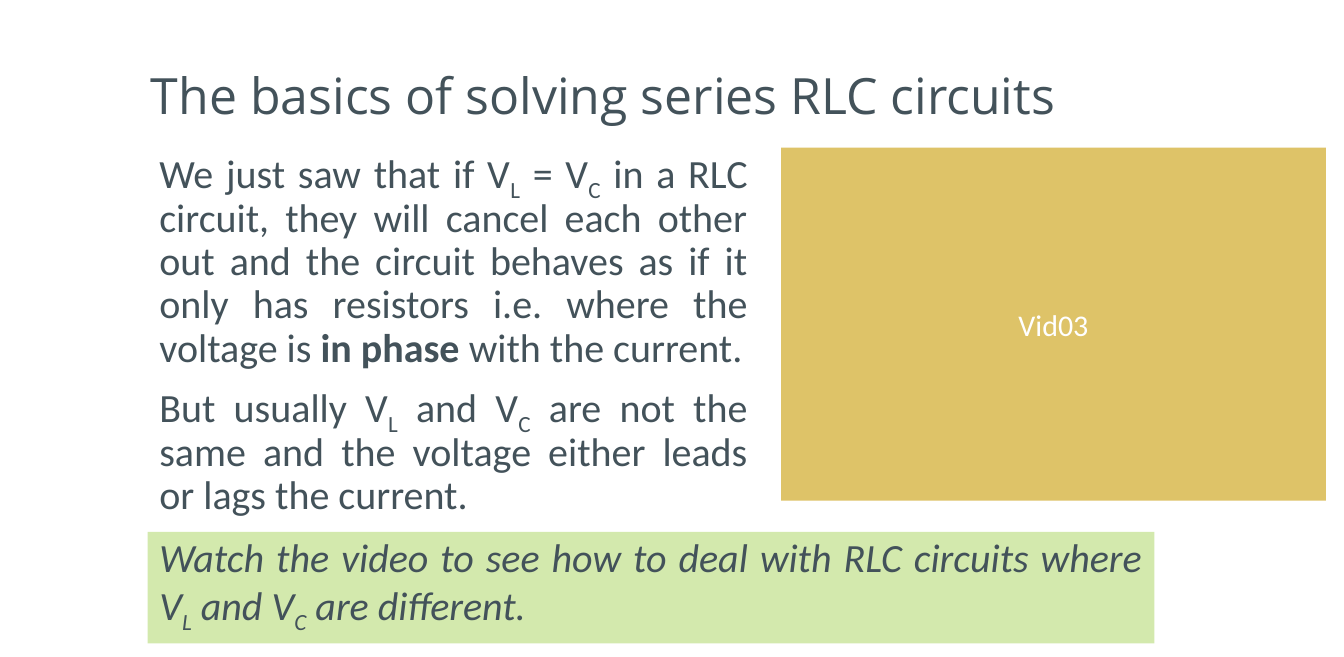
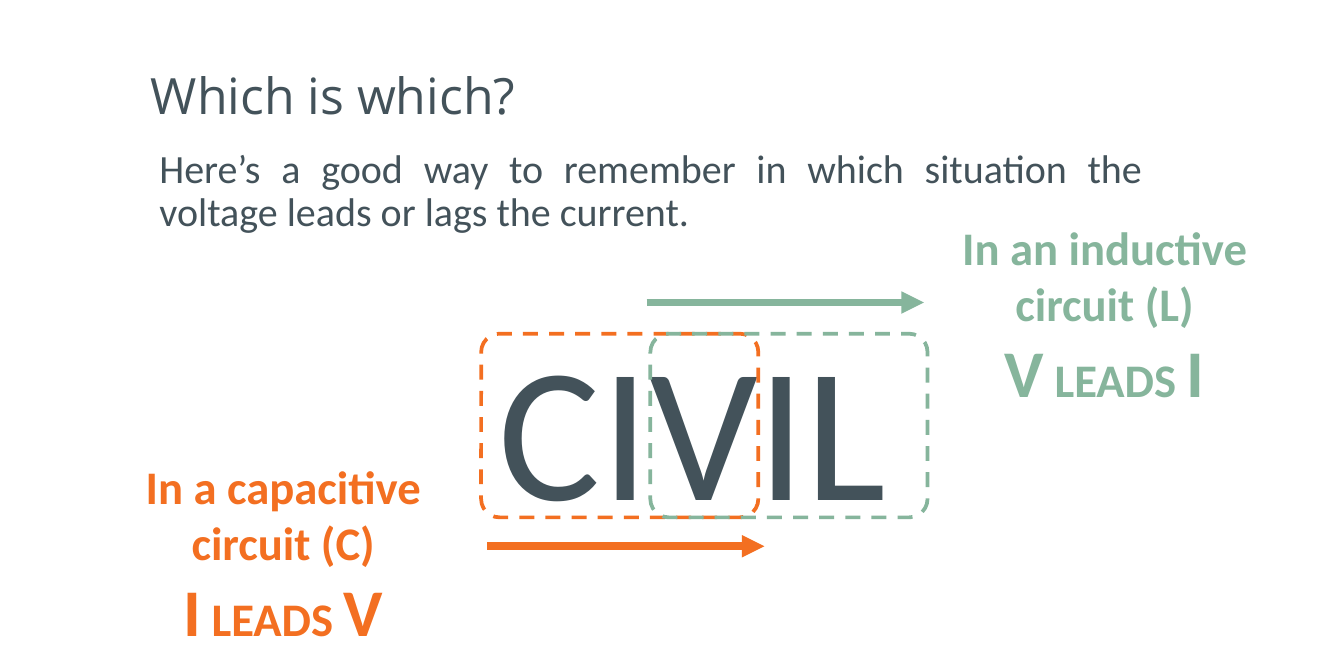
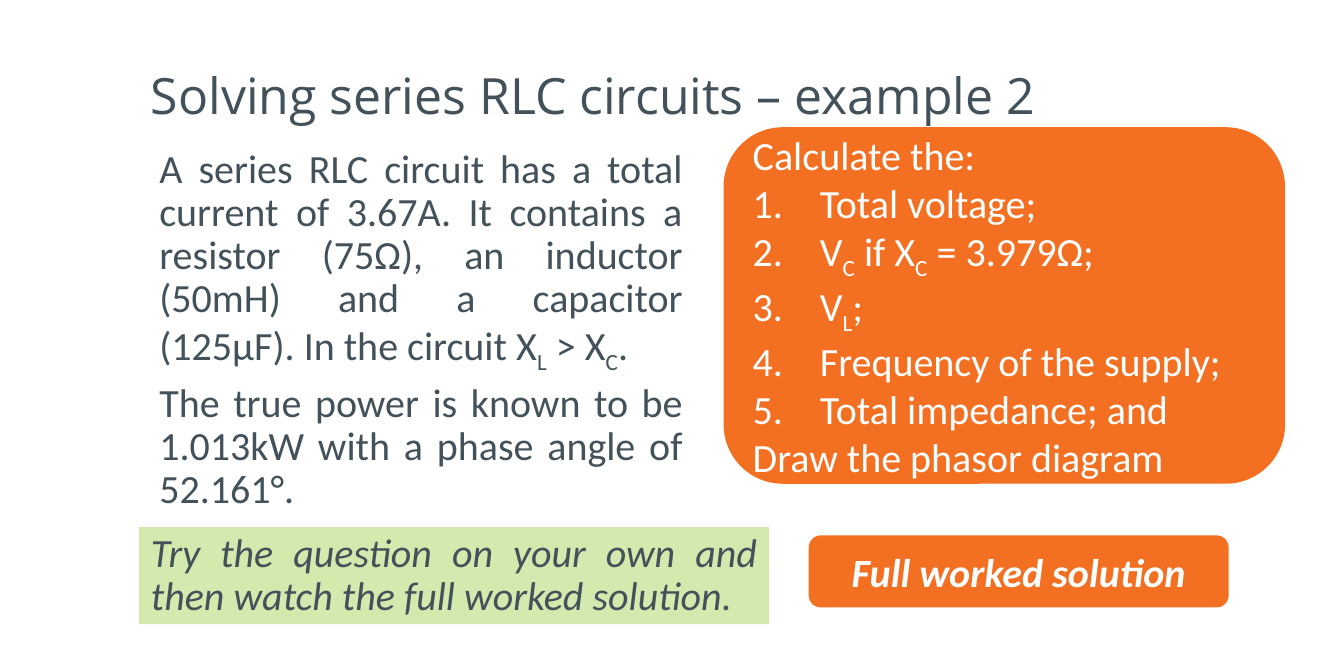
from lxml import etree
from pptx import Presentation
from pptx.dml.color import RGBColor
from pptx.enum import dml, shapes, text
from pptx.oxml.ns import qn
from pptx.util import Cm, Inches, Pt

SLATE, ORANGE, SAGE = "43525A", "F36F21", "86B59C"
LIME, GOLD, WHITE = "D3E9AD", "DEC368", "FFFFFF"
RECT, ROUND = shapes.MSO_SHAPE.RECTANGLE, shapes.MSO_SHAPE.ROUNDED_RECTANGLE
TOP, MIDDLE = text.MSO_ANCHOR.TOP, text.MSO_ANCHOR.MIDDLE
LEFT, CENTER, JUSTIFY = text.PP_ALIGN.LEFT, text.PP_ALIGN.CENTER, text.PP_ALIGN.JUSTIFY

TITLE = dict(font=dict(name="Open Sans", size=Pt(30)), anchor=MIDDLE,
             layout=dict(line_spacing=0.9))
BODY = dict(layout=dict(alignment=JUSTIFY, line_spacing=0.9, space_before=Pt(7.3)))
NOTE = dict(BODY, font=dict(italic=True), fill=LIME)
L, C = ("L", dict(subscript=True)), ("C", dict(subscript=True))


def add_box(slide, at, kind=None, fill=None, line=None):
    """Add a preset shape, or a text box when no kind is given."""
    place = [Inches(length) for length in at]
    if kind is None:
        return slide.shapes.add_textbox(*place)
    shape = slide.shapes.add_shape(kind, *place)
    shape.shadow.inherit = False
    if fill:
        shape.fill.solid()
        shape.fill.fore_color.rgb = RGBColor.from_string(fill)
    else:
        shape.fill.background()
    if line:
        shape.line.color.rgb = RGBColor.from_string(line)
        shape.line.width = Pt(2.25)
        shape.line.dash_style = dml.MSO_LINE.DASH
    else:
        shape.line.fill.background()
    return shape


def add_text(slide, at, paragraphs, kind=None, fill=None, color=SLATE, anchor=TOP,
             font={}, layout={}, wrap=True, numbered=()):
    """Add a box of paragraphs; a run is a string or a (string, format) pair."""
    frame = add_box(slide, at, kind, fill).text_frame
    frame.word_wrap, frame.vertical_anchor = wrap, anchor
    for index, runs in enumerate(paragraphs):
        paragraph = frame.paragraphs[0] if index == 0 else frame.add_paragraph()
        for name, value in dict(dict(alignment=LEFT), **layout).items():
            setattr(paragraph, name, value)
        if index in numbered:
            properties = paragraph._p.get_or_add_pPr()
            properties.set("marL", str(Inches(0.56)))
            properties.set("indent", str(-Inches(0.56)))
            etree.SubElement(properties, qn("a:buAutoNum"), type="arabicPeriod")
        for item in runs:
            words, extra = (item, {}) if isinstance(item, str) else item
            run = paragraph.add_run()
            run.text = words
            run.font.color.rgb = RGBColor.from_string(color)
            values = dict(dict(name="Calibri", size=Pt(24)), **font)
            values.update(extra)
            if values.pop("subscript", False):
                run._r.get_or_add_rPr().set("baseline", "-25000")
            for name, value in values.items():
                setattr(run.font, name, value)


presentation = Presentation()
presentation.slide_width, presentation.slide_height = Cm(28.45), Cm(13.9)
slides = []
for title in ("The basics of solving series RLC circuits", "Which is which?",
              "Solving series RLC circuits – example 2"):
    slide = presentation.slides.add_slide(presentation.slide_layouts[6])
    add_text(slide, (1.16, 0.29, 8.39, 1.06), [[title]], **TITLE)
    slides.append(slide)
basics, which, example = slides

# Basics
add_text(basics, (1.23, 1.19, 5.1, 3.4), [
    ["We just saw that if V", L, " = V", C,
     " in a RLC circuit, they will cancel each other out and the circuit behaves "
     "as if it only has resistors i.e. where the voltage is ",
     ("in phase ", dict(bold=True)), "with the current."],
    ["But usually V", L, " and V", C,
     " are not the same and the voltage either leads or lags the current."],
], **BODY)
add_text(basics, (6.51, 1.23, 4.54, 2.94), [["Vid03"]], RECT, GOLD, WHITE, MIDDLE,
         font=dict(size=Pt(18)), layout=dict(alignment=CENTER))
add_text(basics, (1.23, 4.43, 8.39, 0.93), [
    ["Watch the video to see how to deal with RLC circuits where V", L, " and V", C,
     " are different."]], RECT, **NOTE)

# Which leads
add_text(which, (1.23, 1.19, 8.39, 1.53), [
    ["Here’s a good way to remember in which situation the voltage leads or lags "
     "the current."]], **BODY)
add_text(which, (4.06, 2.52, 3.47, 2.04), [["CIVIL"]], font=dict(size=Pt(115)), wrap=False)
large = dict(size=Pt(40))
for color, frame_left, label_at, label, first, second, arrow_left, arrow_top in (
    (ORANGE, 4.01, (0.84, 3.76, 3.04, 1.72), "In a capacitive circuit (C)", "I", "V", 4.06, 4.55),
    (SAGE, 5.42, (7.68, 1.77, 3.05, 1.72), "In an inductive circuit (L)", "V", "I", 5.39, 2.52),
):
    letters = add_box(which, (frame_left, 2.78, 2.31, 1.53), ROUND, line=color)
    letters.adjustments[0] = 0.1
    add_text(which, label_at, [[label], [(first, large), " LEADS ", (second, large)]],
             color=color, font=dict(size=Pt(28), bold=True), layout=dict(alignment=CENTER))
    arrow = which.shapes.add_connector(
        shapes.MSO_CONNECTOR.STRAIGHT, Inches(arrow_left), Inches(arrow_top),
        Inches(arrow_left + 2.31), Inches(arrow_top))
    arrow.line.color.rgb = RGBColor.from_string(color)
    arrow.line.width = Pt(4.5)
    etree.SubElement(arrow.line._get_or_add_ln(), qn("a:tailEnd"), type="triangle")
    etree.SubElement(arrow._element.spPr, qn("a:effectLst"))

# Worked example
add_text(example, (6.74, 4.46, 3.5, 0.6), [["Full worked solution"]], ROUND, ORANGE, WHITE,
         MIDDLE, font=dict(bold=True, italic=True), layout=dict(alignment=CENTER))
add_text(example, (6.03, 1.06, 4.68, 2.97), [
    ["Calculate the:"],
    ["Total voltage;"],
    ["V", C, " if X", C, " = 3.979Ω;"],
    ["V", L, ";"],
    ["Frequency of the supply;"],
    ["Total impedance; and"],
    ["Draw the phasor diagram"],
], ROUND, ORANGE, WHITE, MIDDLE, numbered=range(1, 6))
add_text(example, (1.16, 4.39, 5.25, 0.81), [
    ["Try the question on your own and then watch the full worked solution."]], RECT, **NOTE)
add_text(example, (1.23, 1.19, 4.56, 3.22), [
    ["A series RLC circuit has a total current of 3.67A. It contains a resistor (75Ω), "
     "an inductor (50mH) and a capacitor (125μF). In the circuit X", L, " > X", C, "."],
    ["The true power is known to be 1.013kW with a phase angle of 52.161°."],
], **BODY)

presentation.save("out.pptx")
